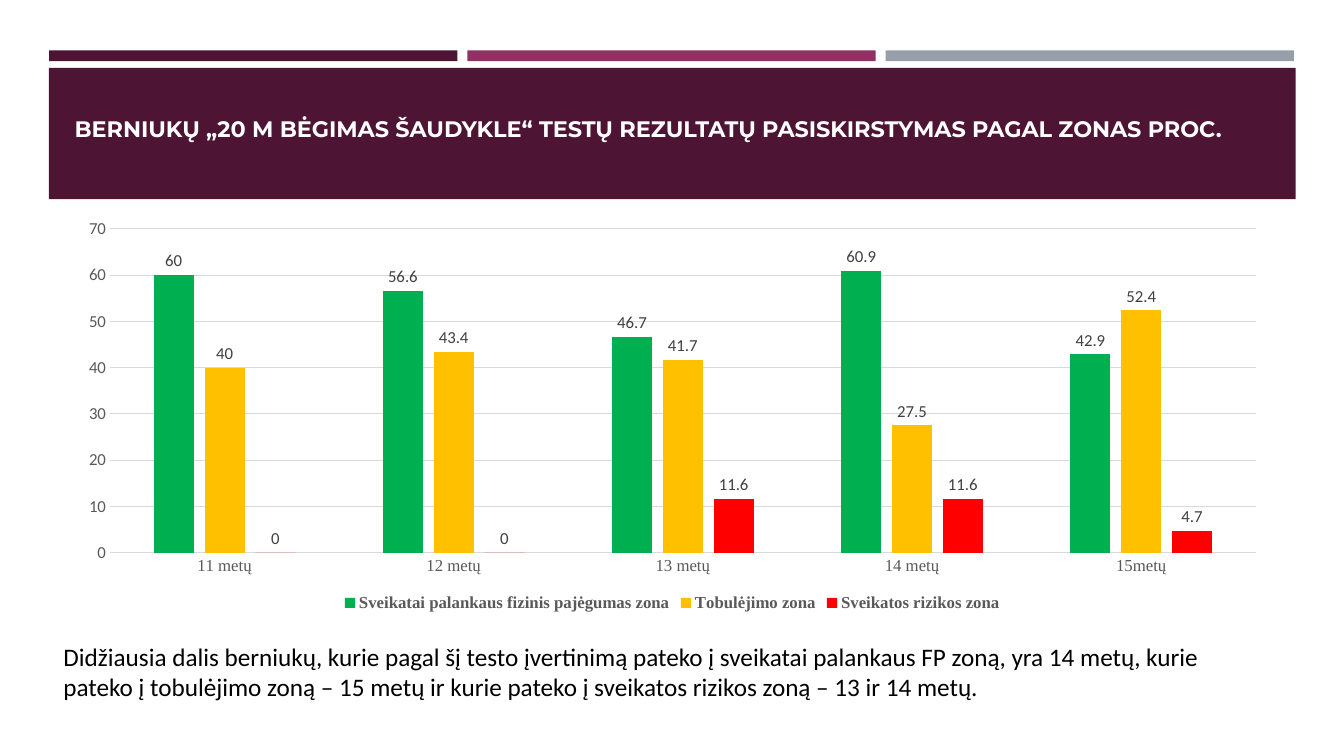
from pptx import Presentation
from pptx.chart.data import CategoryChartData
from pptx.dml.color import RGBColor
from pptx.enum.chart import XL_CHART_TYPE, XL_LABEL_POSITION, XL_LEGEND_POSITION, XL_TICK_MARK
from pptx.enum.shapes import MSO_SHAPE
from pptx.enum.text import MSO_ANCHOR
from pptx.util import Cm, Pt

RECTANGLE = MSO_SHAPE.RECTANGLE
COLUMNS = XL_CHART_TYPE.COLUMN_CLUSTERED
OUTSIDE_END = XL_LABEL_POSITION.OUTSIDE_END
LEGEND_BOTTOM = XL_LEGEND_POSITION.BOTTOM
NO_TICKS = XL_TICK_MARK.NONE
BOTTOM, MIDDLE = MSO_ANCHOR.BOTTOM, MSO_ANCHOR.MIDDLE

PLUM, MAGENTA, GREY = "4D1434", "903163", "969FA7"
AXIS_TEXT, AXIS_LINE = "595959", "D9D9D9"
CONTENT_LEFT, CONTENT_WIDTH = 1.63, 30.63


def color(code):
    return RGBColor.from_string(code)


def style_font(font, name, size, code, bold=False):
    font.name = name
    font.size = Pt(size)
    font.bold = bold
    font.color.rgb = color(code)


deck = Presentation()
deck.slide_width = Cm(33.87)
deck.slide_height = Cm(19.05)
page = deck.slides.add_slide(deck.slide_layouts[6])

bars = [(1.24 + 10.54 * index, 1.27, 10.29, 0.27, code)
        for index, code in enumerate([PLUM, MAGENTA, GREY])]
banner = (1.23, 1.71, 31.42, 3.31, PLUM)
for left, top, width, height, code in bars + [banner]:
    bar = page.shapes.add_shape(RECTANGLE, Cm(left), Cm(top), Cm(width), Cm(height))
    bar.shadow.inherit = False
    bar.fill.solid()
    bar.fill.fore_color.rgb = color(code)
    bar.line.fill.background()

chart_data = CategoryChartData()
chart_data.categories = ["11 metų", "12 metų", "13 metų", "14 metų", "15metų"]
zones = [
    ("Sveikatai palankaus fizinis pajėgumas zona", [60, 56.6, 46.7, 60.9, 42.9], "00B050"),
    ("Tobulėjimo zona", [40, 43.4, 41.7, 27.5, 52.4], "FFC000"),
    ("Sveikatos rizikos zona", [0, 0, 11.6, 11.6, 4.7], "FF0000"),
]
for name, values, code in zones:
    chart_data.add_series(name, values)

chart = page.shapes.add_chart(COLUMNS, Cm(CONTENT_LEFT), Cm(5.31),
                              Cm(CONTENT_WIDTH), Cm(10.21), chart_data).chart
style_font(chart.font, "Calibri", 10, "000000")
chart.has_title = False
chart.has_legend = True
chart.legend.position = LEGEND_BOTTOM
chart.legend.include_in_layout = False
style_font(chart.legend.font, "Times New Roman", 12, AXIS_TEXT, True)

plot = chart.plots[0]
plot.vary_by_categories = False
plot.gap_width = 219
plot.overlap = -27
for series, (name, values, code) in zip(plot.series, zones):
    series.format.fill.solid()
    series.format.fill.fore_color.rgb = color(code)
    series.invert_if_negative = False
    labels = series.data_labels
    labels.show_value = True
    labels.position = OUTSIDE_END
    style_font(labels.font, "Calibri", 12, "404040")

ages, percents = chart.category_axis, chart.value_axis
for axis, font_name in [(ages, "Times New Roman"), (percents, "Calibri")]:
    axis.major_tick_mark = NO_TICKS
    axis.minor_tick_mark = NO_TICKS
    style_font(axis.tick_labels.font, font_name, 12, AXIS_TEXT)
percents.minimum_scale = 0
percents.maximum_scale = 70
percents.major_unit = 10
percents.format.line.fill.background()
percents.has_major_gridlines = True
for line in [ages.format.line, percents.major_gridlines.format.line]:
    line.color.rgb = color(AXIS_LINE)
    line.width = Pt(0.75)

texts = [
    ("BERNIUKŲ „20 M BĖGIMAS ŠAUDYKLE“ TESTŲ REZULTATŲ PASISKIRSTYMAS PAGAL ZONAS PROC.",
     CONTENT_LEFT, 1.55, 2.82, BOTTOM, 0.8, 0, 0, "Montserrat", 16, "FFFFFF", True),
    ("Didžiausia dalis berniukų, kurie pagal šį testo įvertinimą pateko į sveikatai palankaus "
     "FP zoną, yra 14 metų, kurie pateko į tobulėjimo zoną – 15 metų ir kurie pateko į "
     "sveikatos rizikos zoną – 13 ir 14 metų.",
     1.35, 15.06, 3.73, MIDDLE, 0.13, 3.6, 6, "Calibri", 18, "000000", False),
]
for text, left, top, height, anchor, inset, before, after, name, size, code, bold in texts:
    box = page.shapes.add_textbox(Cm(left), Cm(top), Cm(CONTENT_WIDTH), Cm(height))
    frame = box.text_frame
    frame.word_wrap = True
    frame.vertical_anchor = anchor
    frame.margin_bottom = Cm(inset)
    para = frame.paragraphs[0]
    para.space_before = Pt(before)
    para.space_after = Pt(after)
    span = para.add_run()
    span.text = text
    style_font(span.font, name, size, code, bold)

deck.save("out.pptx")
